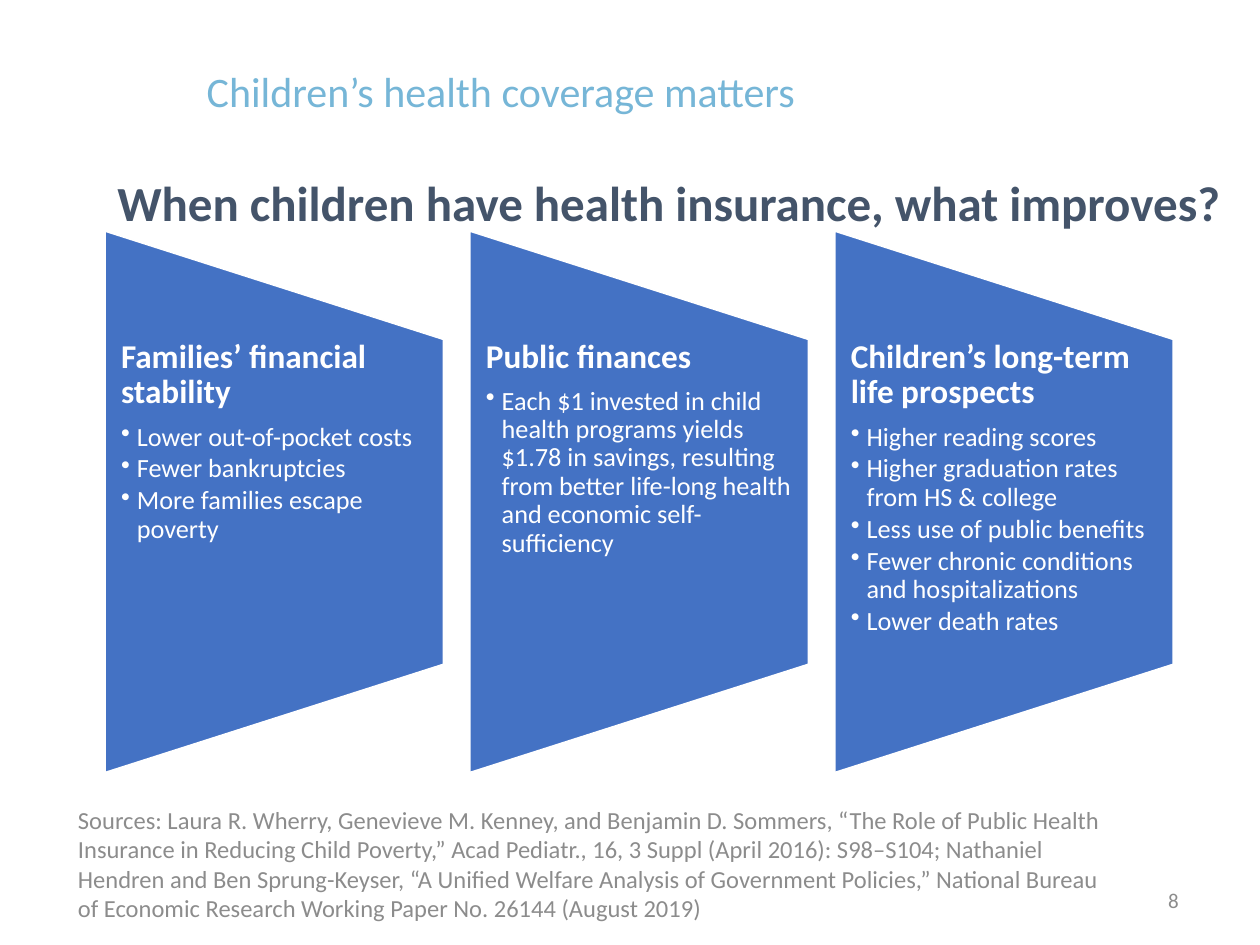
from dataclasses import dataclass

from lxml import etree
from pptx import Presentation
from pptx.dml.color import RGBColor
from pptx.enum import shapes, text
from pptx.oxml import ns
from pptx.util import Pt


@dataclass(frozen=True)
class Theme:
    font: str = "Calibri"
    sky: str = "76B6D7"
    navy: str = "44546A"
    blue: str = "4472C4"
    gray: str = "8C8C8C"
    white: str = "FFFFFF"
    title: int = 24
    ask: int = 28
    head: int = 19
    item: int = 15
    note: int = 14
    page: int = 12


THEME = Theme()
PANELS = [
    ("Families’ financial stability", [
        "Lower out-of-pocket costs",
        "Fewer bankruptcies",
        "More families escape poverty",
    ]),
    ("Public finances", [
        "Each $1 invested in child health programs yields $1.78 in savings, "
        "resulting from better life-long health and economic self-sufficiency",
    ]),
    ("Children’s long-term life prospects", [
        "Higher reading scores",
        "Higher graduation rates from HS & college",
        "Less use of public benefits",
        "Fewer chronic conditions and hospitalizations",
        "Lower death rates",
    ]),
]
SOURCES = (
    "Sources: Laura R. Wherry, Genevieve M. Kenney, and Benjamin D. Sommers, "
    "“The Role of Public Health Insurance in Reducing Child Poverty,” Acad Pediatr., "
    "16, 3 Suppl (April 2016): S98–S104; Nathaniel Hendren and Ben Sprung-Keyser, "
    "“A Unified Welfare Analysis of Government Policies,” National Bureau of Economic "
    "Research Working Paper No. 26144 (August 2019)"
)


def style(para, size, color, bold=False):
    font = para.font
    font.name, font.size, font.bold = THEME.font, Pt(size), bold
    font.color.rgb = RGBColor.from_string(color)


def add_text(slide, box, words, size, color, bold=False, wrap=True,
             anchor=text.MSO_ANCHOR.MIDDLE, align=text.PP_ALIGN.LEFT):
    frame = slide.shapes.add_textbox(*map(Pt, box)).text_frame
    frame.word_wrap = wrap
    frame.vertical_anchor = anchor
    para = frame.paragraphs[0]
    para.text = words
    para.alignment = align
    style(para, size, color, bold)
    return frame


def add_item(frame, words):
    para = frame.add_paragraph()
    para.text = words
    para.level = 1
    props = para._p.get_or_add_pPr()
    props.set("marL", str(Pt(9)))
    props.set("indent", str(Pt(-9)))
    etree.SubElement(props, ns.qn("a:buChar"), char="•")
    para.line_spacing = 0.9
    para.space_after = Pt(2)
    style(para, THEME.item, THEME.white)


def add_panel(slide, box, head, items):
    left, top, width, height = box
    shift = (height - width) / 2
    panel = slide.shapes.add_shape(
        shapes.MSO_SHAPE.FLOWCHART_MANUAL_OPERATION,
        Pt(left - shift), Pt(top + shift), Pt(height), Pt(width))
    panel.rotation = 270
    panel.shadow.inherit = False
    panel.fill.solid()
    panel.fill.fore_color.rgb = RGBColor.from_string(THEME.blue)
    panel.line.color.rgb = RGBColor.from_string(THEME.white)
    panel.line.width = Pt(1)

    inner = (left, top + height / 5, width, height * 3 / 5)
    frame = add_text(slide, inner, head, THEME.head, THEME.white, bold=True,
                     anchor=text.MSO_ANCHOR.TOP)
    frame.margin_left = frame.margin_right = Pt(9.2)
    frame.margin_top = frame.margin_bottom = 0
    para = frame.paragraphs[0]
    para.line_spacing = 0.9
    para.space_after = Pt(7)
    for words in items:
        add_item(frame, words)


def add_panels(slide, box, gap):
    left, top, width, height = box
    wide = (width - gap * (len(PANELS) - 1)) / len(PANELS)
    for i, (head, items) in enumerate(PANELS):
        add_panel(slide, (left + i * (wide + gap), top, wide, height), head, items)


def add_title(slide, box):
    frame = add_text(slide, box, "Children’s health coverage matters",
                     THEME.title, THEME.sky)
    frame.paragraphs[0].line_spacing = 0.9


def add_ask(slide, box):
    add_text(slide, box, "When children have health insurance, what improves?",
             THEME.ask, THEME.navy, bold=True, wrap=False,
             anchor=text.MSO_ANCHOR.TOP)


def add_foot(slide, box):
    left, top, width, height = box
    add_text(slide, (left, top, 606, 35), SOURCES, THEME.note, THEME.gray)
    add_text(slide, (left + width - 41, top + height - 29, 41, 29), "8",
             THEME.page, THEME.gray, align=text.PP_ALIGN.CENTER)


def main():
    deck = Presentation()
    deck.slide_width, deck.slide_height = Pt(720), Pt(540)
    slide = deck.slides.add_slide(deck.slide_layouts[6])
    add_title(slide, (111, 19, 572, 69))
    add_foot(slide, (37.5, 476, 653.5, 53))
    add_panels(slide, (60, 132, 610.5, 309.5), 15)
    add_ask(slide, (60, 95, 652, 41))
    deck.save("out.pptx")


if __name__ == "__main__":
    main()
